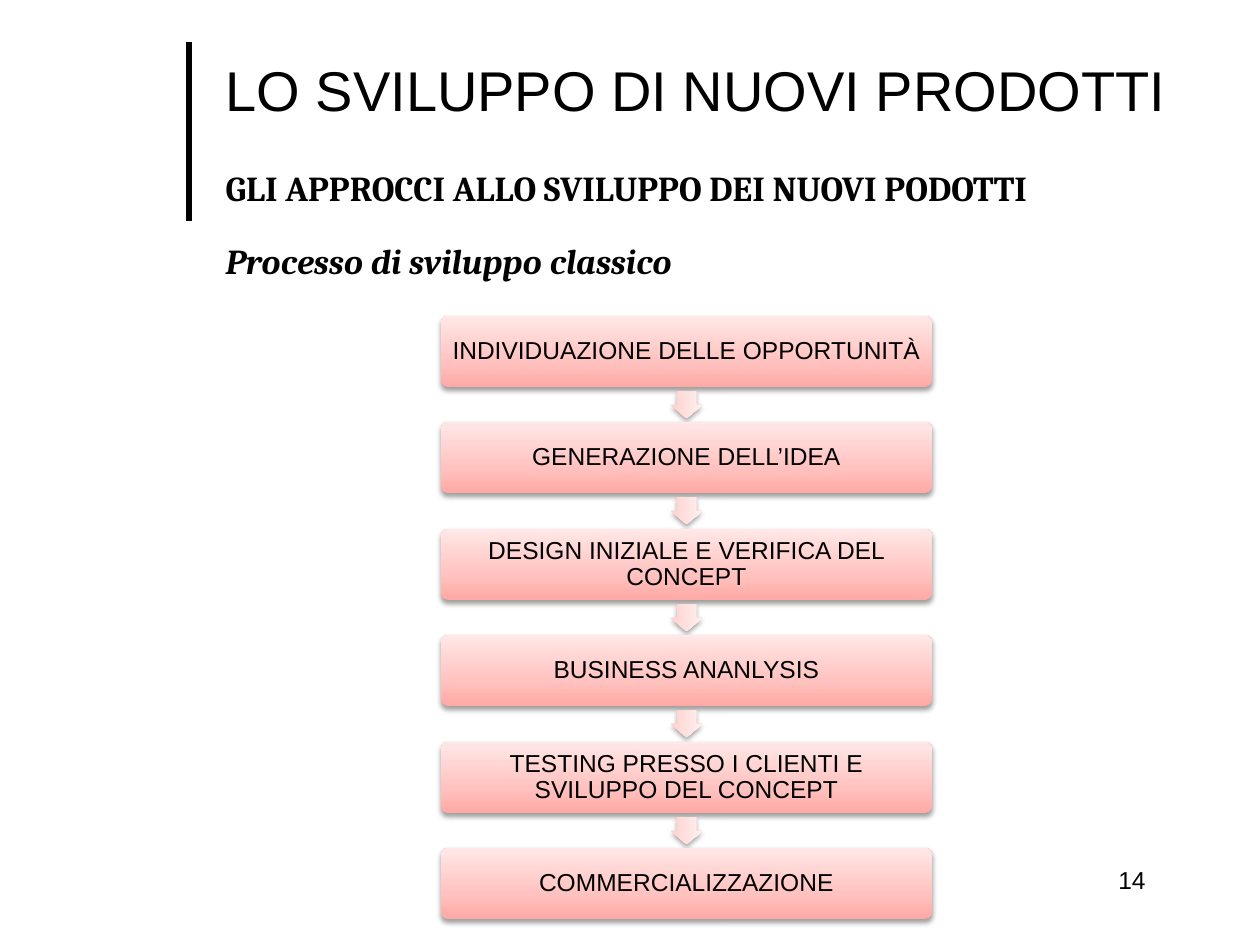
from lxml import etree
from pptx import Presentation
from pptx.dml.color import RGBColor
from pptx.enum.shapes import MSO_CONNECTOR, MSO_SHAPE
from pptx.enum.text import MSO_ANCHOR, MSO_AUTO_SIZE, PP_ALIGN
from pptx.oxml.ns import qn
from pptx.util import Emu, Pt

STRAIGHT = MSO_CONNECTOR.STRAIGHT
ROUNDED = MSO_SHAPE.ROUNDED_RECTANGLE
ARROW = MSO_SHAPE.RIGHT_ARROW
MIDDLE, TOP = MSO_ANCHOR.MIDDLE, MSO_ANCHOR.TOP
LEFT, CENTER, JUSTIFY = PP_ALIGN.LEFT, PP_ALIGN.CENTER, PP_ALIGN.JUSTIFY
NO_AUTOFIT = MSO_AUTO_SIZE.NONE

EMU_PER_PX = 914400 / 126
BLACK = "000000"
BOX_COLOURS = [(0, "FFA9A5"), (35, "FFC2BF"), (100, "FFE8E7")]
ARROW_COLOURS = [(0, "FFCFCD"), (35, "FFDCDA"), (100, "FFF1F1")]
FIRST_TOP, LAST_TOP = 316, 848
STEPS = [
    "INDIVIDUAZIONE DELLE OPPORTUNITÀ",
    "GENERAZIONE DELL’IDEA",
    "DESIGN INIZIALE E VERIFICA DEL CONCEPT",
    "BUSINESS ANANLYSIS",
    "TESTING PRESSO I CLIENTI E SVILUPPO DEL CONCEPT",
    "COMMERCIALIZZAZIONE",
]


def px(length):
    """Turn pixels into EMU."""
    return Emu(round(length * EMU_PER_PX))


def colour(value):
    """Turn a hex string into a colour."""
    return RGBColor.from_string(value)


def place(shape, left, top, width, height):
    """Move and size a shape in pixels."""
    shape.left, shape.top = px(left), px(top)
    shape.width, shape.height = px(width), px(height)


def style(paragraph, size, font="Arial", align=LEFT, bold=False, italic=False):
    """Format a paragraph and its runs."""
    paragraph.alignment = align
    for span in paragraph.runs:
        span.font.name, span.font.size = font, Pt(size)
        span.font.bold, span.font.italic = bold, italic
        span.font.color.rgb = colour(BLACK)


def add_rule(page):
    """Draw the vertical rule beside the title."""
    rule = page.shapes.add_connector(STRAIGHT, px(189), px(221), px(189), px(42))
    rule.line.color.rgb = colour(BLACK)
    rule.line.width = Pt(3)
    etree.SubElement(rule._element.spPr, qn("a:effectLst"))


def fill_title(title):
    """Write the slide title."""
    place(title, 213, 34, 1002, 111)
    frame = title.text_frame
    frame.text = "LO SVILUPPO DI NUOVI PRODOTTI"
    frame.auto_size, frame.vertical_anchor = NO_AUTOFIT, MIDDLE
    style(frame.paragraphs[0], 32)


def fill_body(body):
    """Write the section heading and the name of the process."""
    place(body, 213, 165, 1002, 714)
    frame = body.text_frame
    frame.text = "GLI APPROCCI ALLO SVILUPPO DEI NUOVI PODOTTI\nProcesso di sviluppo classico"
    frame.auto_size, frame.vertical_anchor = NO_AUTOFIT, TOP
    for paragraph, gap, italic in zip(frame.paragraphs, (0, 20), (False, True)):
        properties = paragraph._p.get_or_add_pPr()
        properties.set("marL", "0")
        properties.set("indent", "0")
        etree.SubElement(properties, qn("a:buNone"))
        paragraph.line_spacing = 0.9
        paragraph.space_before = Pt(gap)
        style(paragraph, 20, "Cambria", JUSTIFY, True, italic)


def add_page_number(page):
    """Write the page number."""
    box = page.shapes.add_textbox(px(1106), px(859), px(179), px(63))
    box.text_frame.word_wrap = True
    box.text_frame.text = "14"
    style(box.text_frame.paragraphs[0], 14)


def add_shadow(shape):
    """Give a shape a soft shadow below it."""
    shape.shadow.inherit = False
    effects = shape._element.spPr.find(qn("a:effectLst"))
    shadow = etree.SubElement(
        effects, qn("a:outerShdw"), blurRad=str(Pt(3.1)), dist=str(Pt(1.6)),
        dir="5400000", rotWithShape="0")
    tint = etree.SubElement(shadow, qn("a:srgbClr"), val=BLACK)
    etree.SubElement(tint, qn("a:alpha"), val="38000")


def add_gradient_shape(page, kind, bounds, adjustments, stops):
    """Add a borderless shape with an upward gradient and a shadow."""
    shape = page.shapes.add_shape(kind, 0, 0, 0, 0)
    place(shape, *bounds)
    for index, value in enumerate(adjustments):
        shape.adjustments[index] = value
    shape.fill.gradient()
    shape.fill.gradient_angle = 90
    stop_list = shape._element.spPr.find(".//" + qn("a:gsLst"))
    for stop in list(stop_list):
        stop_list.remove(stop)
    for position, value in stops:
        stop = etree.SubElement(stop_list, qn("a:gs"), pos=str(position * 1000))
        etree.SubElement(stop, qn("a:srgbClr"), val=value)
    shape.line.fill.background()
    add_shadow(shape)
    return shape


def add_step(page, top, text):
    """Add one step of the process."""
    box = add_gradient_shape(page, ROUNDED, (441, top, 491, 71), [0.1], BOX_COLOURS)
    frame = box.text_frame
    frame.word_wrap, frame.vertical_anchor = True, MIDDLE
    frame.margin_left = frame.margin_right = px(5)
    frame.margin_top = frame.margin_bottom = px(5)
    frame.text = text
    frame.paragraphs[0].line_spacing = 0.9
    style(frame.paragraphs[0], 14, align=CENTER)


def add_arrow(page, top):
    """Add the arrow that leads to the next step."""
    arrow = add_gradient_shape(page, ARROW, (673, top, 27, 32), [0.6, 0.5], ARROW_COLOURS)
    arrow.rotation = 90


def main():
    """Build and save the slide."""
    deck = Presentation()
    deck.slide_width, deck.slide_height = px(1260), px(945)
    page = deck.slides.add_slide(deck.slide_layouts[1])
    add_rule(page)
    fill_title(page.shapes.title)
    fill_body(page.placeholders[1])
    add_page_number(page)
    pitch = (LAST_TOP - FIRST_TOP) / (len(STEPS) - 1)
    for index, text in enumerate(STEPS):
        top = round(FIRST_TOP + index * pitch)
        add_step(page, top, text)
        if index < len(STEPS) - 1:
            add_arrow(page, top + 73)
    deck.save("out.pptx")


if __name__ == "__main__":
    main()
